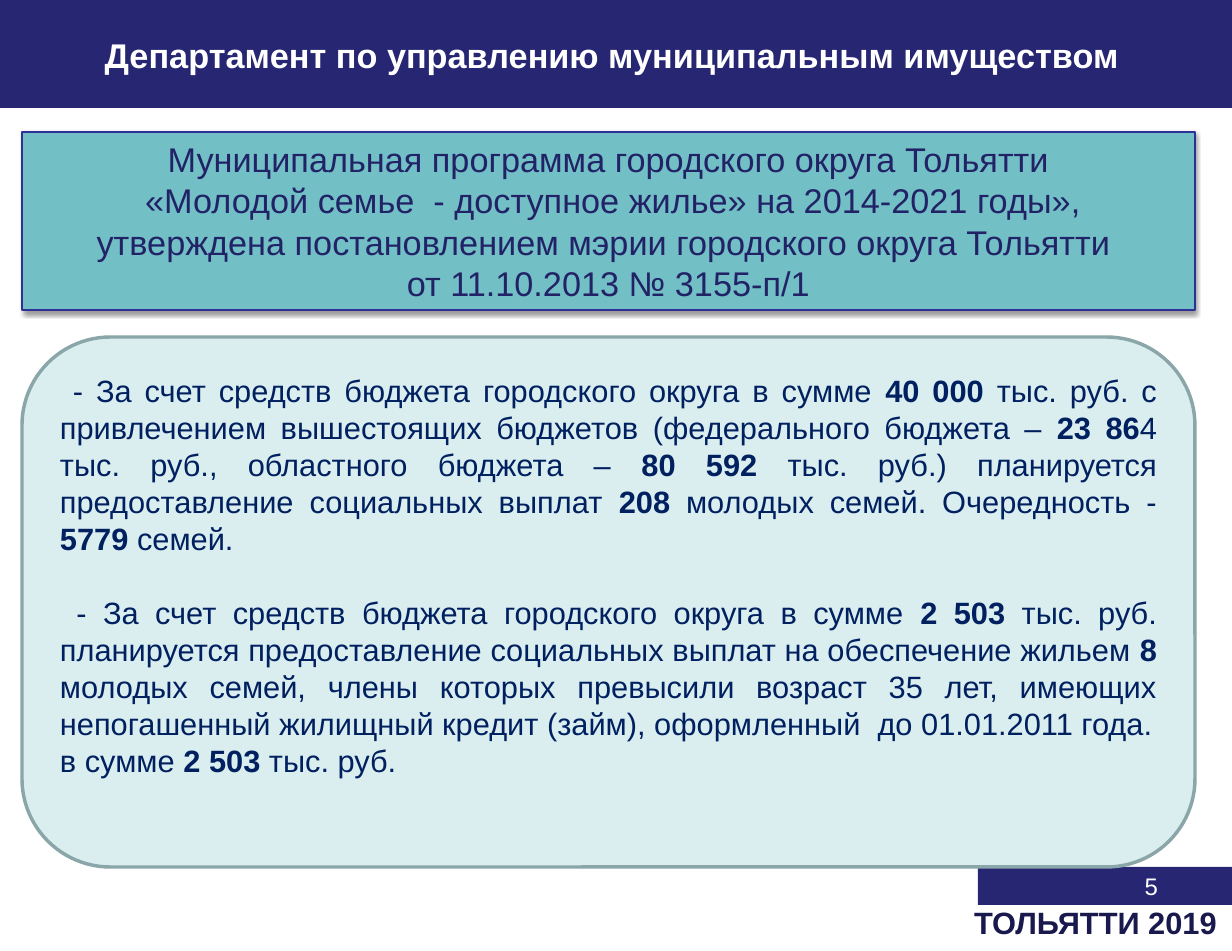
from lxml import etree
from pptx import Presentation
from pptx.dml.color import RGBColor
from pptx.enum.shapes import MSO_SHAPE as Shape
from pptx.enum.text import MSO_ANCHOR as Anchor, PP_ALIGN as Align
from pptx.oxml import parse_xml
from pptx.util import Pt

PX = 914400 / 123.2
WIDTH, HEIGHT = 1232, 951

WHITE = RGBColor(0xFF, 0xFF, 0xFF)
NAVY = RGBColor(0x26, 0x26, 0x73)
DARK_NAVY = RGBColor(0x19, 0x19, 0x4D)
PROGRAM_TEXT = RGBColor(0x22, 0x22, 0x67)
PROGRAM_LINE = RGBColor(0x2F, 0x2F, 0x98)
TEAL = RGBColor(0x72, 0xBF, 0xC5)
PALE_TEAL = RGBColor(0xDA, 0xED, 0xEF)
GREY_TEAL = RGBColor(0x8A, 0xA6, 0xA8)
BODY_TEXT = RGBColor(0x00, 0x20, 0x60)

SHADOW = (
    '<a:effectLst xmlns:a="http://schemas.openxmlformats.org/drawingml/2006/main">'
    '<a:outerShdw blurRad="39370" dist="20320" dir="5400000" rotWithShape="0">'
    '<a:srgbClr val="000000"><a:alpha val="38000"/></a:srgbClr>'
    '</a:outerShdw></a:effectLst>'
)


def add_box(kind, box, fill=None, line=None, line_width=0):
    """Add a preset shape, or a text box when kind is None; box is in px."""
    place = [round(value * PX) for value in box]
    if kind is None:
        return slide.shapes.add_textbox(*place)
    shape = slide.shapes.add_shape(kind, *place)
    shape.shadow.inherit = False
    shape.fill.solid()
    shape.fill.fore_color.rgb = fill
    if line is None:
        shape.line.fill.background()
    else:
        shape.line.color.rgb = line
        shape.line.width = Pt(line_width)
    return shape


def write(shape, texts, size, color, frame_format, paragraph_format, bold=False):
    """Write one paragraph per text; parts between ** marks switch boldness."""
    frame = shape.text_frame
    frame.word_wrap = True
    for name, value in frame_format.items():
        setattr(frame, name, value)
    for index, text in enumerate(texts):
        paragraph = frame.add_paragraph() if index else frame.paragraphs[0]
        for name, value in paragraph_format.items():
            setattr(paragraph, name, value)
        for part_index, part in enumerate(text.split("**")):
            if not part:
                continue
            run = paragraph.add_run()
            run.text = part
            run.font.name = "Arial"
            run.font.size = Pt(size)
            run.font.bold = bold or part_index % 2 == 1
            run.font.color.rgb = color
    return frame


presentation = Presentation()
presentation.slide_width = round(WIDTH * PX)
presentation.slide_height = round(HEIGHT * PX)
slide = presentation.slides.add_slide(presentation.slide_layouts[6])

# Footer bar and page number
add_box(Shape.RECTANGLE, (978, 867, 254, 38), NAVY)
page_number = add_box(None, (883, 866, 287, 67))
write(page_number, ["5"], 14, WHITE, {"vertical_anchor": Anchor.TOP},
      {"alignment": Align.RIGHT})

# Header
header = add_box(Shape.RECTANGLE, (0, 0, WIDTH, 108), NAVY)
write(header, ["Департамент по управлению муниципальным имуществом"], 20, WHITE,
      {"vertical_anchor": Anchor.MIDDLE, "margin_left": round(12 * PX),
       "margin_right": round(20 * PX), "margin_top": round(15 * PX)},
      {"alignment": Align.CENTER, "line_spacing": 0.8}, bold=True)

# Footer label
label = add_box(None, (962, 905, 272, 43))
write(label, ["ТОЛЬЯТТИ 2019"], 18, DARK_NAVY, {"vertical_anchor": Anchor.TOP},
      {"alignment": Align.LEFT, "line_spacing": 0.8}, bold=True)

# Programme name
program = add_box(Shape.RECTANGLE, (22, 132, 1173, 178), TEAL, PROGRAM_LINE, 0.75)
properties = program.element.spPr
for effects in properties.findall("{*}effectLst"):
    properties.replace(effects, parse_xml(SHADOW))
write(program, [
    "Муниципальная программа городского округа Тольятти",
    " «Молодой семье  - доступное жилье» на 2014-2021 годы»,",
    "утверждена постановлением мэрии городского округа Тольятти ",
    "от 11.10.2013 № 3155-п/1",
], 20, PROGRAM_TEXT, {"vertical_anchor": Anchor.TOP},
    {"alignment": Align.CENTER, "line_spacing": Pt(24.2)})

# Funding details
details = add_box(Shape.ROUNDED_RECTANGLE, (22, 337, 1173, 530), PALE_TEAL, GREY_TEAL, 2)
details_frame = write(details, [
    " - За счет средств бюджета городского округа в сумме **40 000 **тыс. руб. "
    "с привлечением вышестоящих бюджетов (федерального бюджета – **23 86**4 тыс. руб., "
    "областного бюджета – **80 592 **тыс. руб.) планируется предоставление "
    "социальных выплат **208 **молодых семей. Очередность - **5779** семей.",
    " - За счет средств бюджета городского округа в сумме **2 503** тыс. руб. "
    "планируется предоставление социальных выплат на обеспечение жильем **8** "
    "молодых семей, члены которых превысили возраст 35 лет, имеющих непогашенный "
    "жилищный кредит (займ), оформленный  до 01.01.2011 года.",
    "в сумме **2 503** тыс. руб.",
], 18, BODY_TEXT, {"vertical_anchor": Anchor.TOP, "margin_top": round(9 * PX)},
    {"alignment": Align.JUSTIFY, "line_spacing": Pt(21.6)})
details_frame.paragraphs[1].space_before = Pt(21.6)

presentation.save("out.pptx")
